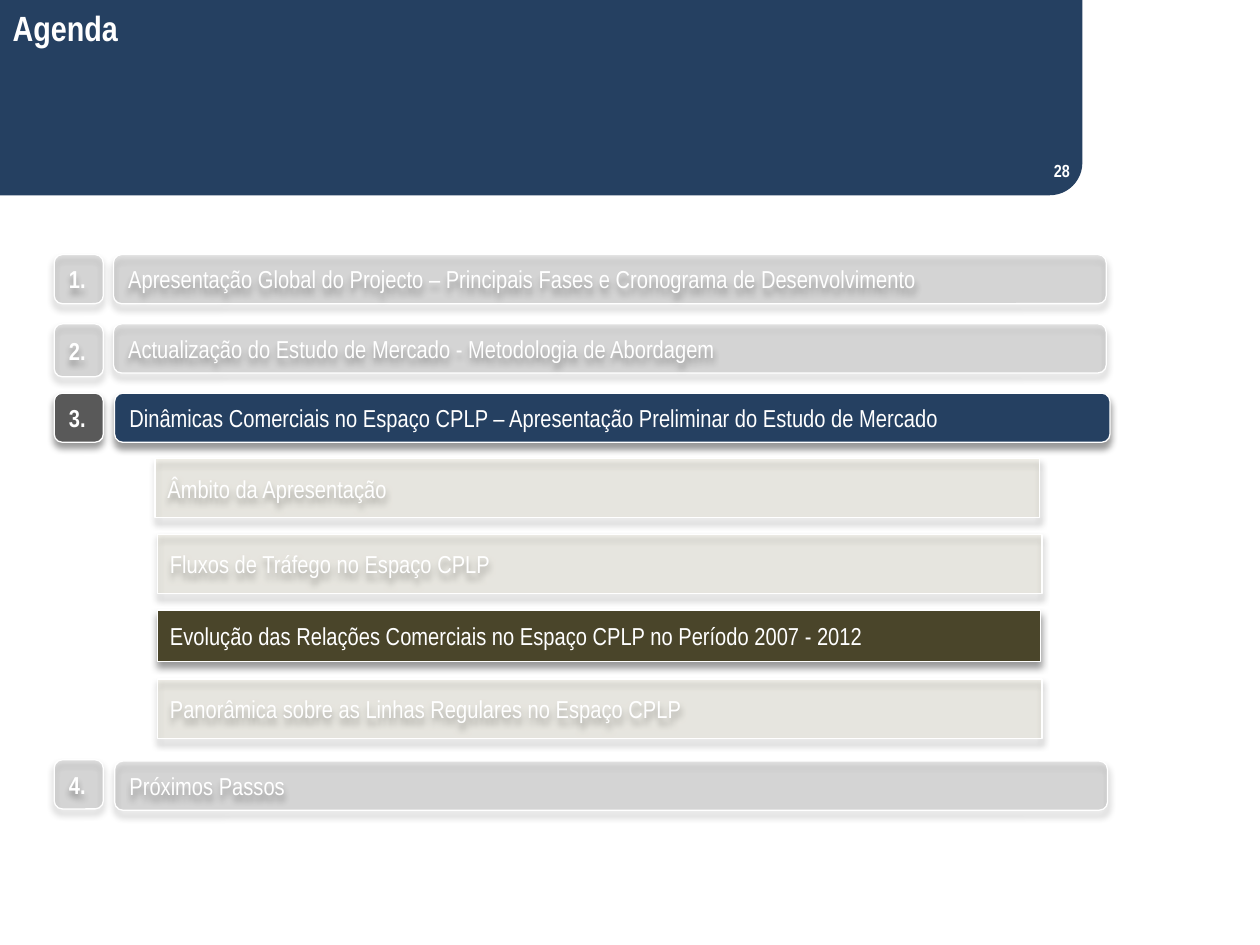
from lxml.etree import SubElement
from pptx import Presentation
from pptx.dml.color import RGBColor
from pptx.enum.shapes import MSO_SHAPE
from pptx.enum.text import MSO_ANCHOR, MSO_AUTO_SIZE, PP_ALIGN
from pptx.oxml.ns import qn
from pptx.util import Inches, Pt

FONT = "Arial Narrow"
COLORS = {"navy": "254061", "gray": "595959", "sand": "C4BD97",
          "olive": "4A452A", "white": "FFFFFF", "black": "000000"}
FADED = 17  # opacity of inactive items, percent

# top, badge height, bar left, bar top, bar width, number, text, active
TOPICS = [
    (2.02, 0.39, 0.9, 2.02, 7.88, "1.",
     "Apresentação Global do Projecto – Principais Fases e Cronograma de Desenvolvimento", False),
    (2.57, 0.42, 0.9, 2.57, 7.88, "2.",
     "Actualização do Estudo de Mercado - Metodologia de Abordagem", False),
    (3.12, 0.39, 0.91, 3.12, 7.9, "3.",
     "Dinâmicas Comerciais no Espaço CPLP – Apresentação Preliminar do Estudo de Mercado", True),
    (6.03, 0.39, 0.91, 6.04, 7.88, "4.", "Próximos Passos", False),
]

# left, top, width, height, text, active
SUBTOPICS = [
    (1.23, 3.64, 7.02, 0.47, "Âmbito da Apresentação", False),
    (1.25, 4.24, 7.02, 0.47, "Fluxos de Tráfego no Espaço CPLP", False),
    (1.25, 4.84, 7.01, 0.41,
     "Evolução das Relações Comerciais no Espaço CPLP no Período 2007 - 2012", True),
    (1.25, 5.39, 7.02, 0.47, "Panorâmica sobre as Linhas Regulares no Espaço CPLP", False),
]


def rgb(name):
    return RGBColor.from_string(COLORS[name])


def set_alpha(color, percent):
    SubElement(color, qn("a:alpha"), val=str(percent * 1000))


def add_shadow(shape):
    effects = shape._element.spPr.find(qn("a:effectLst"))
    outer = SubElement(effects, qn("a:outerShdw"), blurRad=str(Pt(4)),
                       dist=str(Pt(3)), dir="5400000", rotWithShape="0")
    set_alpha(SubElement(outer, qn("a:srgbClr"), val=COLORS["black"]), 40)


def add_block(slide, kind, box, fill):
    shape = slide.shapes.add_shape(kind, *map(Inches, box))
    shape.shadow.inherit = False
    shape.fill.solid()
    shape.fill.fore_color.rgb = rgb(fill)
    shape.line.fill.background()
    return shape


def set_text(shape, text, size, bold=False, align=PP_ALIGN.LEFT,
             anchor=MSO_ANCHOR.MIDDLE):
    frame = shape.text_frame
    frame.text = text
    frame.word_wrap = True
    frame.auto_size = MSO_AUTO_SIZE.NONE
    frame.vertical_anchor = anchor
    para = frame.paragraphs[0]
    para.alignment = align
    para.font.name = FONT
    para.font.size = Pt(size)
    para.font.bold = bold
    para.font.color.rgb = rgb("white")


def add_item(slide, kind, box, fill, text, active, bold=False):
    shape = add_block(slide, kind, box, fill)
    if not active:
        color = shape._element.spPr.find(qn("a:solidFill"))[0]
        set_alpha(color, FADED)
    shape.line.color.rgb = rgb("white")
    shape.line.width = Pt(0.75)
    add_shadow(shape)
    set_text(shape, text, 14, bold)


def add_header(slide):
    # Banner: the second block squares off the top left corner
    add_block(slide, MSO_SHAPE.ROUND_2_DIAG_RECTANGLE, (0, 0, 8.59, 1.55), "navy")
    add_block(slide, MSO_SHAPE.RECTANGLE, (0, 0, 7.64, 0.9), "navy")

    # Title, brought in front of the banner
    title = slide.shapes.title
    title.left, title.top = Inches(0), Inches(0)
    title.width, title.height = Inches(4.41), Inches(0.44)
    set_text(title, "Agenda", 20, True, anchor=MSO_ANCHOR.TOP)
    slide.shapes._spTree.append(title._element)

    # Page number
    page = slide.shapes.add_textbox(*map(Inches, (6.26, 1.15, 2.33, 0.4)))
    set_text(page, "28", 10, True, PP_ALIGN.RIGHT)


def main():
    deck = Presentation()
    deck.slide_width, deck.slide_height = Inches(10), Inches(7.5)
    slide = deck.slides.add_slide(deck.slide_layouts[5])
    add_header(slide)

    # Numbered topics
    for top, high, left, bar_top, wide, number, text, active in TOPICS:
        add_item(slide, MSO_SHAPE.ROUNDED_RECTANGLE, (0.43, top, 0.39, high),
                 "gray", number, active, True)
        add_item(slide, MSO_SHAPE.ROUNDED_RECTANGLE, (left, bar_top, wide, 0.39),
                 "navy" if active else "gray", text, active)

    # Parts of the third topic
    for *box, text, active in SUBTOPICS:
        add_item(slide, MSO_SHAPE.RECTANGLE, box,
                 "olive" if active else "sand", text, active)

    deck.save("out.pptx")


if __name__ == "__main__":
    main()
